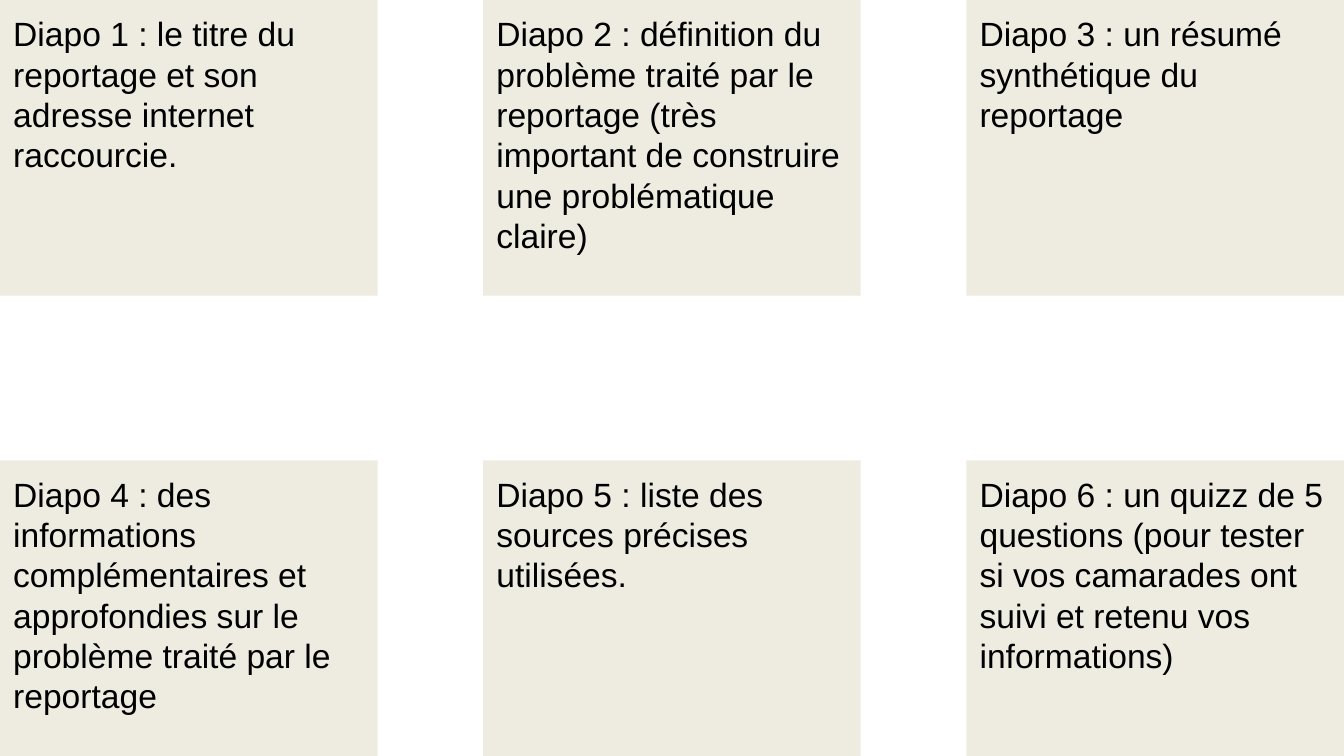
from pptx import Presentation
from pptx import util as u
from pptx.dml.color import RGBColor
from pptx.enum import shapes, text

# Content: one list per row of cards
ROWS = [
    [
        "Diapo 1 : le titre du reportage et son adresse internet raccourcie.",
        "Diapo 2 : définition du problème traité par le reportage "
        "(très important de construire une problématique claire)",
        "Diapo 3 : un résumé synthétique du reportage",
    ],
    [
        "Diapo 4 : des informations complémentaires et approfondies "
        "sur le problème traité par le reportage",
        "Diapo 5 : liste des sources précises utilisées.",
        "Diapo 6 : un quizz de 5 questions (pour tester si vos camarades "
        "ont suivi et retenu vos informations)",
    ],
]

THEME = {
    "card": RGBColor.from_string("EEECE1"),
    "ink": RGBColor.from_string("000000"),
    "font": "Arial",
    "size": u.Pt(18),
    "lead": u.Pt(21.6),
}

# Grid on a 16:9 slide: cards reach the edges, with equal gaps between them
WIDE = 10
HIGH = WIDE * 9 / 16
CARD_W, CARD_H = 2.81, 2.2
INSET = u.Inches(0.1)
STEP_X = (WIDE - CARD_W) / (len(ROWS[0]) - 1)
STEP_Y = (HIGH - CARD_H) / (len(ROWS) - 1)


def add_card(slide, left, top, words):
    card = slide.shapes.add_shape(
        shapes.MSO_SHAPE.RECTANGLE,
        u.Inches(left), u.Inches(top), u.Inches(CARD_W), u.Inches(CARD_H))
    card.shadow.inherit = False
    card.fill.solid()
    card.fill.fore_color.rgb = THEME["card"]
    card.line.fill.background()

    # Text, from the top left corner
    frame = card.text_frame
    frame.word_wrap = True
    frame.vertical_anchor = text.MSO_ANCHOR.TOP
    frame.margin_left = frame.margin_right = INSET
    frame.margin_top = frame.margin_bottom = INSET
    para = frame.paragraphs[0]
    para.alignment = text.PP_ALIGN.LEFT
    para.line_spacing = THEME["lead"]
    run = para.add_run()
    run.text = words
    run.font.name = THEME["font"]
    run.font.size = THEME["size"]
    run.font.color.rgb = THEME["ink"]


def main():
    deck = Presentation()
    deck.slide_width = u.Inches(WIDE)
    deck.slide_height = u.Inches(HIGH)
    slide = deck.slides.add_slide(deck.slide_layouts[6])
    for row, cards in enumerate(ROWS):
        for col, words in enumerate(cards):
            add_card(slide, col * STEP_X, row * STEP_Y, words)
    deck.save("out.pptx")


if __name__ == "__main__":
    main()
